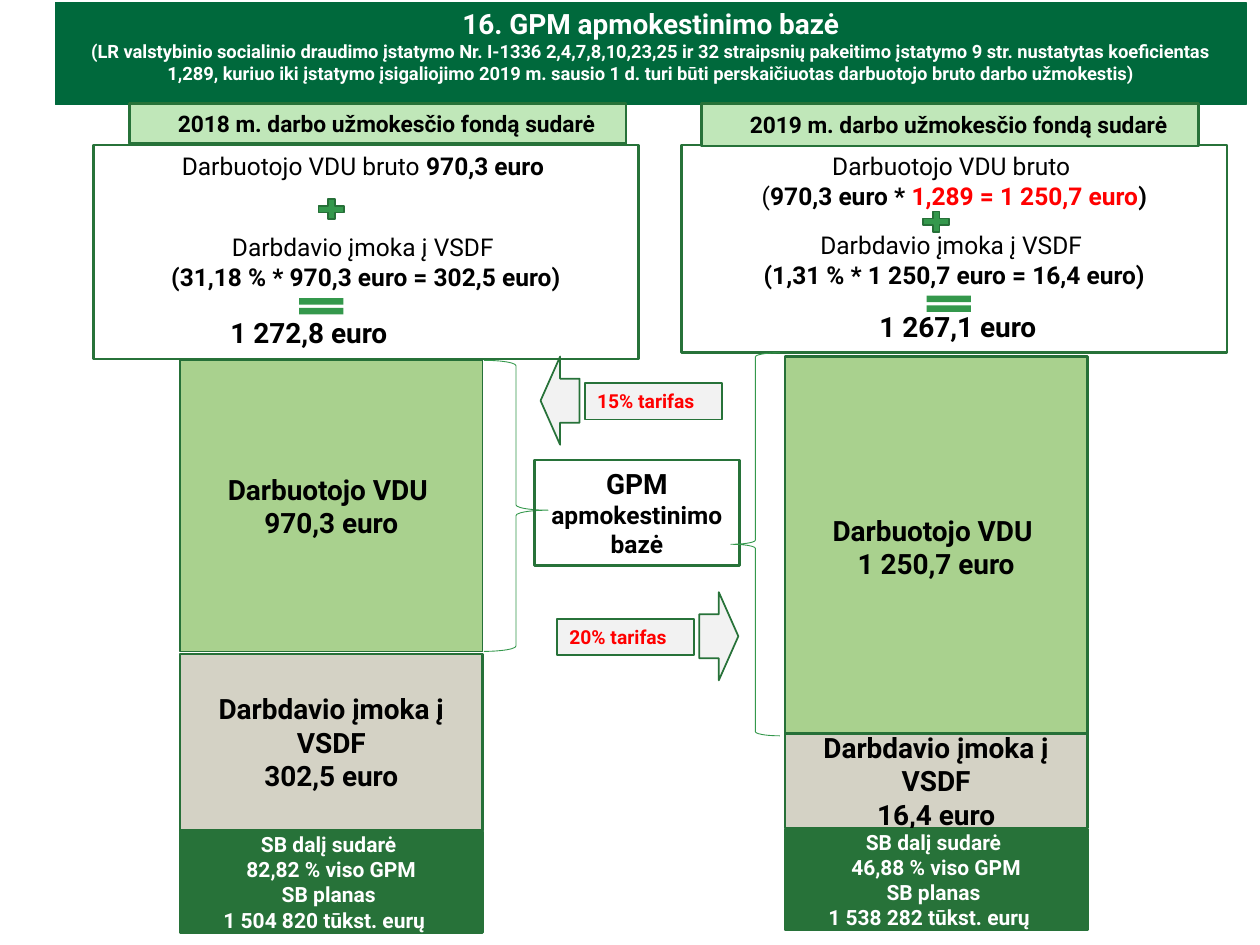
from pptx import Presentation
from pptx.dml.color import RGBColor
from pptx.enum.shapes import MSO_SHAPE as MS
from pptx.enum.text import MSO_ANCHOR as MA, MSO_AUTO_SIZE as AS, PP_ALIGN as PA
from pptx.util import Inches, Pt

rgb = RGBColor.from_string
BLACK, WHITE, RED = "000000", "FFFFFF", "FF0000"
GREEN, EDGE, SIGN = "277239", "267038", "34984C"

prs = Presentation()
prs.slide_width, prs.slide_height = Inches(10), Inches(7.5)
col, row = prs.slide_width / 100, prs.slide_height / 75
s = prs.slides.add_slide(prs.slide_layouts[5])


def box(kind, x, y, w, h, fill=None, line=None, width=1.5):
    sp = s.shapes.add_shape(kind, int(x * col), int(y * row), int(w * col), int(h * row))
    sp.shadow.inherit = False
    if fill:
        sp.fill.solid()
        sp.fill.fore_color.rgb = rgb(fill)
    else:
        sp.fill.background()
    if line:
        sp.line.color.rgb = rgb(line)
        sp.line.width = Pt(width)
    else:
        sp.line.fill.background()
    return sp


def write(sp, paras, anchor=MA.MIDDLE, align=PA.CENTER):
    tf = sp.text_frame
    tf.word_wrap, tf.auto_size, tf.vertical_anchor = True, AS.NONE, anchor
    for i, (runs, before, left, right) in enumerate(paras):
        p = tf.paragraphs[0] if i == 0 else tf.add_paragraph()
        p.alignment = PA.LEFT if left else align
        p.space_before = Pt(before)
        pPr = p._p.get_or_add_pPr()
        pPr.set("marL", str(int(left * col)))
        pPr.set("marR", str(int(right * col)))
        for text, size, color, bold in runs:
            r = p.add_run()
            r.text = text
            r.font.name, r.font.size, r.font.bold = "Roboto", Pt(size), bold
            r.font.color.rgb = rgb(color)
    return tf


title = s.shapes.title
title.left, title.top = int(4.4 * col), int(0.2 * row)
title.width, title.height = int(94.5 * col), int(8.1 * row)
title.fill.solid()
title.fill.fore_color.rgb = rgb("00693C")
title.line.color.rgb = rgb("00693C")
title.line.width = Pt(0.75)
tf = write(title, [
    ([("16. GPM apmokestinimo bazė", 16, WHITE, True)], 0, 0, 0),
    ([("(LR valstybinio socialinio draudimo įstatymo Nr. I-1336 2,4,7,8,10,23,25 ir 32 "
       "straipsnių pakeitimo įstatymo 9 str. nustatytas koeficientas 1,289, kuriuo iki "
       "įstatymo įsigaliojimo 2019 m. sausio 1 d. turi būti perskaičiuotas darbuotojo "
       "bruto darbo užmokestis)", 10.5, WHITE, True)], 0, 0, 0),
], MA.TOP)
tf.margin_top = int(0.3 * row)

gross = ("Darbuotojo VDU bruto ", 14, BLACK, False)
levy = ("Darbdavio įmoka į VSDF ", 14, BLACK, False)
sums_2018 = [
    ([gross, ("970,3 euro ", 14, BLACK, True)], 0, 0, 0),
    ([levy], 29.5, 0, 0),
    ([("(31,18 % * 970,3 euro = 302,5 euro)", 14, BLACK, True)], 0, 0, 0),
    ([("1 272,8 euro", 16, BLACK, True)], 14, 9.9, 0),
]
sums_2019 = [
    ([gross], 0, 0, 0),
    ([("(", 14, BLACK, False), ("970,3 euro * ", 14, BLACK, True),
      ("1,289 = 1 250,7 euro", 14, RED, True), (")", 14, BLACK, True)], 0, 0, 0),
    ([levy], 11.7, 0, 0),
    ([("(1,31 % * 1 250,7 euro = 16,4 euro)", 14, BLACK, True)], 0, 0, 0),
    ([(" 1 267,1 euro", 16, BLACK, True)], 11.7, 0, 0),
]

sides = [
    ("2018", 10.3, 3.2, 7.4, 17, sums_2018, (24.9, 15.5), (23.1, 23.2), 14.3, 1,
     [(28.6, 23.1), (51.9, 14), (66, 8)], "970,3", "302,5", "82,82", "1 504 820"),
    ("2019", 55.7, 3.4, 54.1, 16.5, sums_2019, (72.9, 16.5), (72.9, 23), 62.3, 1.5,
     [(28.3, 30.2), (58.2, 7.5), (65.8, 8)], "1 250,7", "16,4", "46,88", "1 538 282"),
]
for (year, head_x, head_h, panel_x, panel_h, sums, plus, equal, bar_x, edge, bars,
     wage, due, share, plan) in sides:
    panel = box(MS.RECTANGLE, panel_x, 11.5, 43.3, panel_h, None, GREEN)
    write(panel, sums, MA.TOP)
    head = box(MS.RECTANGLE, head_x, 8.2, 39.4, head_h, "C0E7B9", GREEN)
    tf = write(head, [([(f"{year} m. darbo užmokesčio fondą sudarė", 13, BLACK, True)], 0, 0, 0)])
    tf.margin_left = int(2.3 * col)
    box(MS.MATH_PLUS, *plus, 2.8, 2.2, SIGN, EDGE, 1)
    box(MS.MATH_EQUAL, *equal, 4.8, 2.2, SIGN)

    styles = [
        ("A9D18E", EDGE, edge, 16, BLACK, ["Darbuotojo VDU ", f"{wage} euro"]),
        ("D4D2C5", EDGE, 1.5, 16, BLACK, ["Darbdavio įmoka į VSDF", f"{due} euro"]),
        (GREEN, GREEN, 1.5, 12, WHITE, ["SB dalį sudarė ", f"{share} % viso GPM", "SB planas ",
                                        f"{plan} tūkst. eurų"]),
    ]
    for (y, h), (fill, line, width, size, color, texts) in zip(bars, styles):
        sp = box(MS.FLOWCHART_PROCESS, bar_x, y, 24, h, fill, line, width)
        write(sp, [([(t, size, color, True)], 0, 0, 1.1 if "tūkst" in t else 0) for t in texts])

brace = box(MS.RIGHT_BRACE, 38.4, 28.6, 5.1, 23.1, None, SIGN, 0.5)
brace.adjustments[1] = 0.515
base = box(MS.RECTANGLE, 42.4, 36.5, 16.3, 8.4, None, GREEN)
write(base, [([("GPM ", 16, BLACK, True), ("apmokestinimo bazė", 14, BLACK, True)], 0, 0, 0)], MA.TOP)
brace = box(MS.RIGHT_BRACE, 58, 28, 3.9, 30.4, None, SIGN, 0.5)
brace._element.spPr.xfrm.set("flipH", "1")

rates = [("15% tarifas", 46.4, 30.4, 42.9, 28.3, 180), ("20% tarifas", 44.2, 49.1, 55.5, 47, 0)]
for text, x, y, arrow_x, arrow_y, turn in rates:
    rate = box(MS.RECTANGLE, x, y, 10.9, 2.9, "F2F2F2", GREEN, 1)
    write(rate, [([(text, 11, RED, True)], 0, 0, 0)], MA.TOP, PA.LEFT)
    arrow = box(MS.RIGHT_ARROW, arrow_x, arrow_y, 3.1, 7, "F2F2F2", GREEN, 1)
    arrow.rotation = turn

prs.save("out.pptx")
